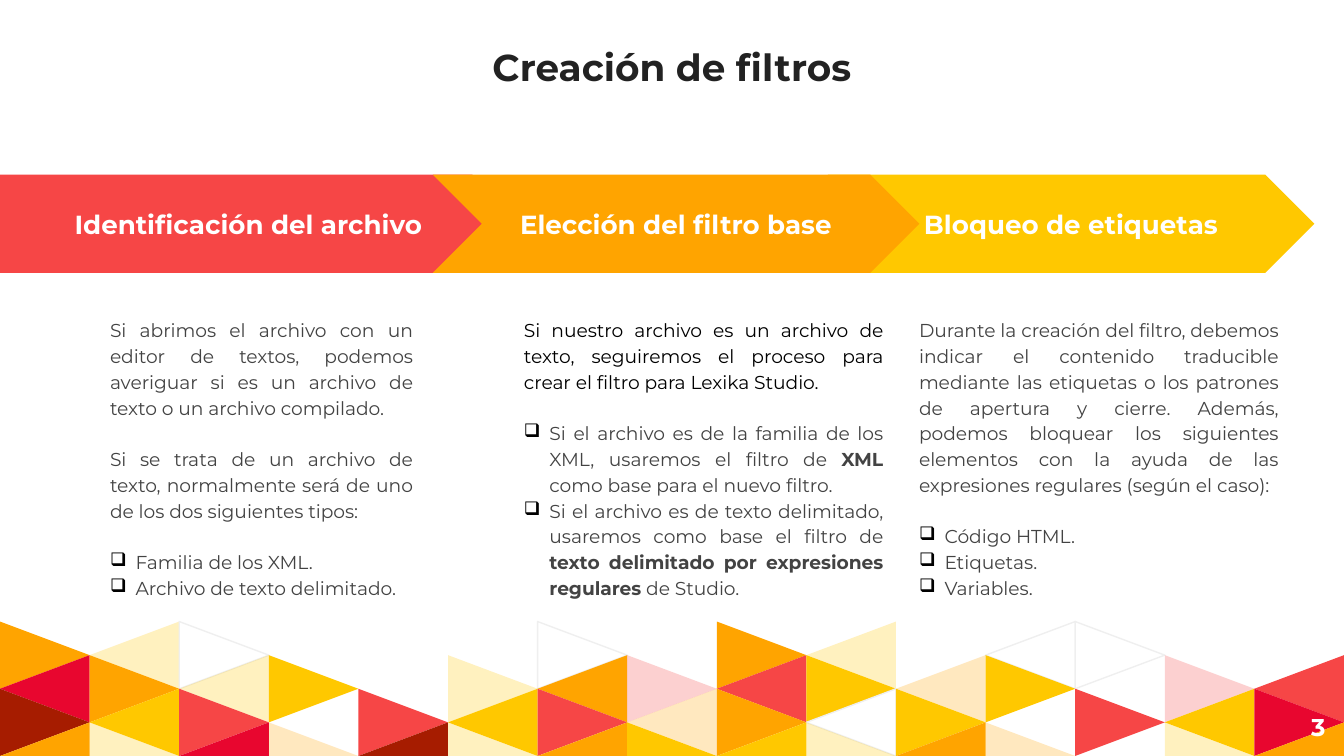
from lxml import etree
from pptx import Presentation
from pptx.dml.color import RGBColor
from pptx.enum.shapes import MSO_SHAPE as Shape
from pptx.enum.text import MSO_ANCHOR as Anchor, PP_ALIGN as Align
from pptx.oxml.ns import qn
from pptx.util import Inches, Pt

FONT = "Montserrat"
WHITE = RGBColor(0xFF, 0xFF, 0xFF)
BLACK = RGBColor(0x00, 0x00, 0x00)
INK = RGBColor(0x22, 0x22, 0x22)
GRAY = RGBColor(0x43, 0x43, 0x43)
OUTLINE = RGBColor(0xEF, 0xEF, 0xEF)
ORANGE = RGBColor(0xFF, 0xA4, 0x00)
YELLOW = RGBColor(0xFF, 0xC8, 0x00)
RED = RGBColor(0xF6, 0x46, 0x46)
CRIMSON = RGBColor(0xE8, 0x06, 0x2F)
BROWN = RGBColor(0xA6, 0x1C, 0x00)

# One letter per triangle; lower case is the same colour at 25 % opacity.
MOSAIC = [
    "OyW...W.Oy.WW..",
    "COyY.yOrRYoY.rR",
    "BYR.RYRoOWY.RYC",
    "OyCoByOYYyOo.yO",
]
MOSAIC_COLORS = {"O": ORANGE, "Y": YELLOW, "R": RED, "C": CRIMSON, "B": BROWN, "W": WHITE}

LINE_GAP = Pt(13.8)
BULLET_INDENT = Inches(0.19)

# Back to front: shape, colour, banner (left, width), text (left, width), heading,
# paragraphs as (text, colour, is bullet, has gap above); ** marks bold.
STEPS = [
    (Shape.CHEVRON, YELLOW, (6.16, 3.62), (6.74, 2.87), "Bloqueo de etiquetas", [
        ("Durante la creación del filtro, debemos indicar el contenido traducible mediante "
         "las etiquetas o los patrones de apertura y cierre. Además, podemos bloquear los "
         "siguientes elementos con la ayuda de las expresiones regulares (según el caso):",
         GRAY, False, False),
        ("Código HTML.", GRAY, True, True),
        ("Etiquetas.", GRAY, True, False),
        ("Variables.", GRAY, True, False),
    ]),
    (Shape.PENTAGON, RED, (0, 3.88), (0.72, 2.45), "Identificación del archivo", [
        ("Si abrimos el archivo con un editor de textos, podemos averiguar si es un archivo "
         "de texto o un archivo compilado.", GRAY, False, False),
        ("Si se trata de un archivo de texto, normalmente será de uno de los dos siguientes "
         "tipos:", GRAY, False, True),
        ("Familia de los XML.", GRAY, True, True),
        ("Archivo de texto delimitado.", GRAY, True, False),
    ]),
    (Shape.CHEVRON, ORANGE, (3.22, 3.62), (3.8, 2.87), "Elección del filtro base", [
        ("Si nuestro archivo es un archivo de texto, seguiremos el proceso para crear el "
         "filtro para Lexika Studio.", BLACK, False, False),
        ("Si el archivo es de la familia de los XML, usaremos el filtro de **XML** como base "
         "para el nuevo filtro.", GRAY, True, True),
        ("Si el archivo es de texto delimitado, usaremos como base el filtro de **texto "
         "delimitado por expresiones regulares** de Studio.", GRAY, True, False),
    ]),
]


def add_run(paragraph, text, size, color, bold):
    run = paragraph.add_run()
    run.text = text
    for name, value in {"name": FONT, "size": Pt(size), "bold": bold}.items():
        setattr(run.font, name, value)
    run.font.color.rgb = color


def prepare_frame(shape, anchor):
    frame = shape.text_frame
    values = {"word_wrap": True, "vertical_anchor": anchor}
    values.update({f"margin_{side}": Inches(0.1) for side in ("left", "top", "right", "bottom")})
    for name, value in values.items():
        setattr(frame, name, value)
    return frame


def add_label(shape, text, size, color, align, anchor):
    paragraph = prepare_frame(shape, anchor).paragraphs[0]
    paragraph.alignment = align
    add_run(paragraph, text, size, color, True)


def add_box(slide, left, top, width, height):
    return slide.shapes.add_textbox(*map(Inches, (left, top, width, height)))


def add_bullet(paragraph):
    properties = paragraph._p.get_or_add_pPr()
    properties.set("marL", str(BULLET_INDENT))
    properties.set("indent", str(-BULLET_INDENT))
    color = etree.SubElement(properties, qn("a:buClr"))
    etree.SubElement(color, qn("a:srgbClr"), val=str(BLACK))
    etree.SubElement(properties, qn("a:buChar"), char="❑")


def add_triangle(slide, points, letter):
    (x, y), *others = [(Inches(px), Inches(py)) for px, py in points]
    builder = slide.shapes.build_freeform(x, y)
    builder.add_line_segments(others, close=True)
    triangle = builder.convert_to_shape()
    triangle.shadow.inherit = False
    triangle.fill.solid()
    triangle.fill.fore_color.rgb = MOSAIC_COLORS[letter.upper()]
    if letter.islower():
        color = triangle._element.spPr.find(qn("a:solidFill"))[0]
        etree.SubElement(color, qn("a:alpha"), val="25000")
    if letter == "W":
        triangle.line.color.rgb = OUTLINE
        triangle.line.width = Pt(0.75)
    else:
        triangle.line.fill.background()


def add_mosaic(slide, left, top, width, height):
    """Triangles point right where row + column is even; the last row is cut in half."""
    column_width = width / len(MOSAIC[0])
    row_height = height / len(MOSAIC)
    bottom = top + height
    for row, letters in enumerate(MOSAIC):
        for column, letter in enumerate(letters):
            if letter == ".":
                continue
            near, far = left + column * column_width, left + (column + 1) * column_width
            edge, tip = (near, far) if (row + column) % 2 == 0 else (far, near)
            y = top + row * row_height
            points = [(edge, y), (tip, y + row_height), (edge, min(y + 2 * row_height, bottom))]
            add_triangle(slide, points, letter)


def add_step(slide, kind, color, banner_span, text_span, heading, paragraphs, top):
    left, width = banner_span
    banner = slide.shapes.add_shape(kind, *map(Inches, (left, top, width, 0.73)))
    banner.shadow.inherit = False
    banner.fill.solid()
    banner.fill.fore_color.rgb = color
    banner.line.fill.background()
    add_label(banner, heading, 14, WHITE, Align.CENTER, Anchor.MIDDLE)

    left, width = text_span
    frame = prepare_frame(add_box(slide, left, top + 0.95, width, 2.86), Anchor.TOP)
    for index, (text, text_color, is_bullet, has_gap) in enumerate(paragraphs):
        paragraph = frame.add_paragraph() if index else frame.paragraphs[0]
        values = {"alignment": Align.JUSTIFY, "line_spacing": 1.15,
                  "space_before": LINE_GAP if has_gap else Pt(0)}
        for name, value in values.items():
            setattr(paragraph, name, value)
        if is_bullet:
            add_bullet(paragraph)
        for part, piece in enumerate(text.split("**")):
            add_run(paragraph, piece, 10, text_color, part % 2 == 1)


def main():
    presentation = Presentation()
    presentation.slide_width = Inches(10)
    presentation.slide_height = Inches(5.625)
    slide = presentation.slides.add_slide(presentation.slide_layouts[6])

    add_mosaic(slide, 0, 4.625, 10, 1)
    add_label(add_box(slide, 0, 0, 10, 0.76), "Creación de filtros", 20, INK,
              Align.CENTER, Anchor.BOTTOM)
    add_label(add_box(slide, 9.36, 5.19, 0.6, 0.43), "3", 13, WHITE, Align.RIGHT, Anchor.MIDDLE)
    for step in STEPS:
        add_step(slide, *step, top=1.3)

    presentation.save("out.pptx")


if __name__ == "__main__":
    main()
